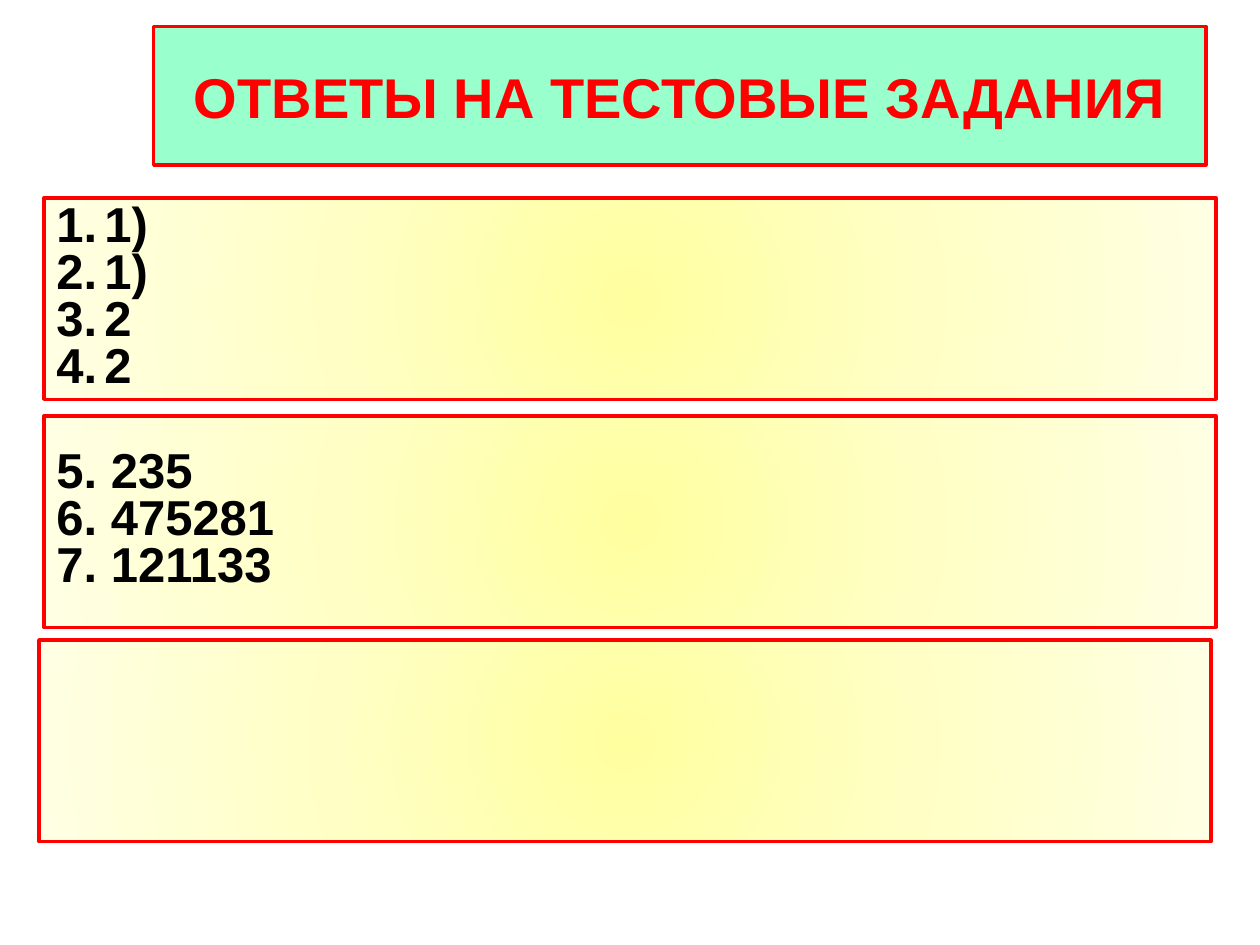
from dataclasses import dataclass

from lxml import etree
from pptx import Presentation
from pptx.dml.color import RGBColor
from pptx.enum import shapes, text
from pptx.oxml import parse_xml
from pptx.oxml.ns import nsdecls, qn
from pptx.util import Inches, Pt

HUES = {"red": "FF0000", "mint": "99FFCC", "ink": "000000",
        "core": "FFFFA0", "mid": "FFFFC5", "rim": "FFFFE3"}
STOPS = {0: "core", 50: "mid", 100: "rim"}
INDENT = Inches(0.38)


@dataclass
class Panel:
    left: float
    top: float
    height: float
    lines: tuple[str, ...] = ()
    auto: bool = False


PANELS = [
    Panel(0.35, 1.57, 1.6, ("1)", "1)", "2", "2"), auto=True),
    Panel(0.35, 3.3, 1.68, ("5. 235", "6. 475281", "7. 121133")),
    Panel(0.31, 5.08, 1.6),
]


def color(name: str) -> RGBColor:
    return RGBColor.from_string(HUES[name])


def place(shape, left: float, top: float, width: float, height: float) -> None:
    shape.left, shape.top = Inches(left), Inches(top)
    shape.width, shape.height = Inches(width), Inches(height)


def outline(shape) -> None:
    shape.line.color.rgb = color("red")
    shape.line.width = Pt(2)


def style(para, size: int, hue: str) -> None:
    font = para.font
    font.name, font.size, font.bold = "Arial", Pt(size), True
    font.color.rgb = color(hue)


def glow(shape) -> None:
    """Fill the shape with a gradient spreading from its centre."""
    stops = "".join(
        f'<a:gs pos="{pos * 1000}"><a:srgbClr val="{HUES[hue]}"/></a:gs>'
        for pos, hue in STOPS.items())
    grad = parse_xml(
        f'<a:gradFill {nsdecls("a")} rotWithShape="1"><a:gsLst>{stops}</a:gsLst>'
        '<a:path path="circle"><a:fillToRect l="50000" t="50000" r="50000" b="50000"/>'
        '</a:path></a:gradFill>')
    shape.fill.solid()
    props = shape.element.spPr
    props.replace(props.find(qn("a:solidFill")), grad)


def number(para) -> None:
    """Number the paragraph automatically, with a hanging indent."""
    props = para._p.get_or_add_pPr()
    props.set("marL", str(INDENT))
    props.set("indent", str(-INDENT))
    etree.SubElement(props, qn("a:buFontTx"))
    etree.SubElement(props, qn("a:buAutoNum"), type="arabicPeriod")


def draw_title(slide, words: str) -> None:
    title = slide.shapes.title
    place(title, 1.22, 0.21, 8.35, 1.1)
    title.fill.solid()
    title.fill.fore_color.rgb = color("mint")
    outline(title)
    frame = title.text_frame
    frame.text = words
    frame.auto_size = text.MSO_AUTO_SIZE.NONE
    frame.vertical_anchor = text.MSO_ANCHOR.MIDDLE
    para = frame.paragraphs[0]
    para.alignment = text.PP_ALIGN.CENTER
    style(para, 32, "red")


def draw_panel(slide, panel: Panel) -> None:
    box = slide.shapes.add_shape(shapes.MSO_SHAPE.RECTANGLE, 0, 0, 0, 0)
    place(box, panel.left, panel.top, 9.3, panel.height)
    box.shadow.inherit = False
    glow(box)
    outline(box)
    frame = box.text_frame
    frame.word_wrap = True
    frame.vertical_anchor = text.MSO_ANCHOR.MIDDLE
    frame.text = "\n".join(panel.lines)
    for para in frame.paragraphs:
        if panel.auto:
            number(para)
        para.alignment = text.PP_ALIGN.LEFT
        para.line_spacing = 0.8
        style(para, 28, "ink")


def main() -> None:
    deck = Presentation()
    deck.slide_width, deck.slide_height = Inches(10), Inches(7.5)
    slide = deck.slides.add_slide(deck.slide_layouts[5])
    draw_title(slide, "ОТВЕТЫ НА ТЕСТОВЫЕ ЗАДАНИЯ")
    for panel in PANELS:
        draw_panel(slide, panel)
    deck.save("out.pptx")


if __name__ == "__main__":
    main()
